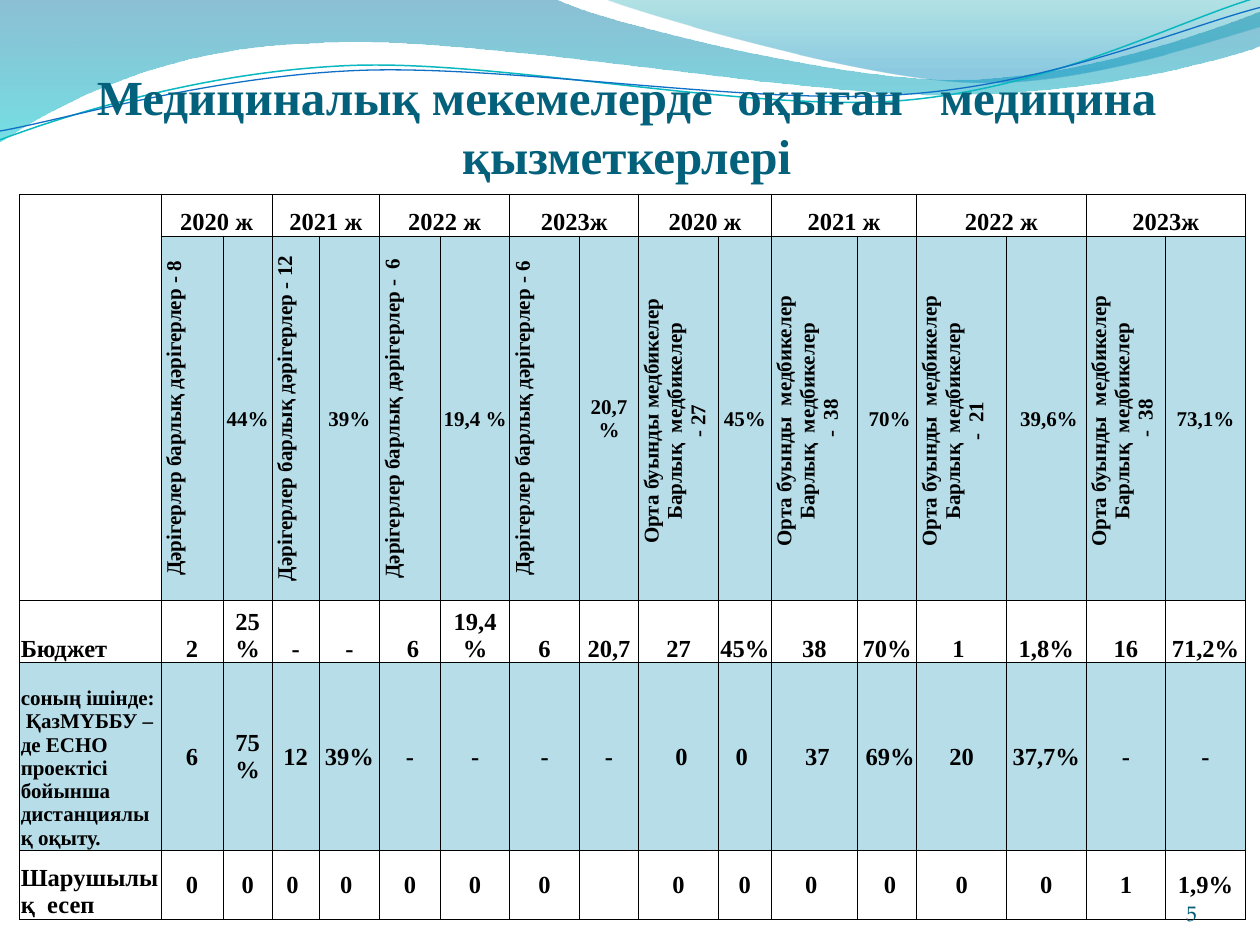
import math

from lxml import etree
from pptx import Presentation, util as u
from pptx.dml.color import RGBColor
from pptx.enum import text
from pptx.oxml.ns import qn

BLACK = RGBColor(0x00, 0x00, 0x00)
TITLE_TEAL = RGBColor(0x04, 0x61, 0x7B)
NUMBER_TEAL = RGBColor(0x04, 0x5D, 0x75)
PALE_BLUE = RGBColor(0xB6, 0xDD, 0xE8)
DEEP_BLUE = RGBColor(0x00, 0x74, 0xA1)
CYAN = RGBColor(0x00, 0xC6, 0xCF)
TEAL = RGBColor(0x00, 0xA1, 0xA9)
SKY_BLUE = RGBColor(0x00, 0x8B, 0xBF)
TEAL_LINE = RGBColor(0x0A, 0xB8, 0xBF)
BLUE_LINE = RGBColor(0x0F, 0x6F, 0xC6)

SERIF = "Times New Roman"
BOTTOM, MIDDLE = text.MSO_ANCHOR.BOTTOM, text.MSO_ANCHOR.MIDDLE
LEFT, CENTER, RIGHT = text.PP_ALIGN.LEFT, text.PP_ALIGN.CENTER, text.PP_ALIGN.RIGHT
TILT = 2.7

# Wave outlines on a grid of ten units across: pairs are corners, sixes are curves
LEFT_WAVE = [(0, 0), (4.4, -0.01), (4.76, 0.17, 6.64, 0.63, 7.58, 0.63),
             (8.53, 0.63, 9.58, 0.26, 10, 0.09), (10.01, 0.36),
             (9.83, 0.44, 8.7, 0.76, 7.46, 0.75), (6.22, 0.75, 3.82, 0.28, 2.57, 0.34),
             (1.29, 0.36, 0.46, 0.83, -0.01, 1.13)]
RIGHT_WAVE = [(4.79, -0.01), (5.09, 0.11, 6.82, 0.62, 7.69, 0.65),
              (8.56, 0.69, 9.61, 0.32, 10, 0.21), (10, 0)]
TEAL_CREST = [(0, 1.11), (0.48, 0.93, 1.58, 0.57, 2.77, 0.52),
              (3.95, 0.47, 5.93, 0.89, 7.13, 0.8), (8.33, 0.71, 9.38, 0.15, 9.98, -0.02)]
BLUE_CREST = [(0, 1.04), (0.47, 0.96, 1.64, 0.61, 2.83, 0.56),
              (4.03, 0.51, 5.97, 0.84, 7.17, 0.75), (8.36, 0.67, 9.41, 0.21, 10, 0.06)]

# Table content
COLUMNS = [1.12, 0.49, 0.39, 0.37, 0.48, 0.48, 0.55, 0.55, 0.47,
           0.63, 0.42, 0.68, 0.47, 0.71, 0.63, 0.63, 0.63]
ROWS = [0.33, 2.9, 0.49, 1.49, 0.55]
YEARS = ["2020 ж", "2021 ж", "2022 ж", "2023ж"] * 2
DOCTORS = "Дәрігерлер барлық дәрігерлер - "
NURSES = "Орта буынды  медбикелер \nБарлық  медбикелер \n-  "
STAFF = [DOCTORS + "8", DOCTORS + "12", DOCTORS + " 6", DOCTORS + "6",
         "Орта буынды медбикелер \nБарлық  медбикелер \n- 27 ",
         NURSES + "38", NURSES + "21 ", NURSES + "38"]
SHARES = ["44%", "39%", "19,4 %", "20,7%", "45%", " 70%", " 39,6%", "73,1%"]
BUDGET = ["Бюджет", "2", "25%", "-", "-", " 6", "19,4%", "6", "20,7",
          "27", "45%", "38", "70%", "1 ", "1,8%", "16", "71,2%"]
DISTANCE = ["соның ішінде:  ҚазМҮББУ –де ЕСНО проектісі  бойынша дистанциялық оқыту.",
            "6", "75%", "12", "39%", "-", "-", "-", "-",
            " 0", "0 ", " 37", " 69%", "20", "37,7%", "-", "-"]
SELF_FUNDED = ["Шарушылық  есеп", "0", "0", "0 ", "0 ", "0", "0", "0", "",
               "0", "0", "0 ", " 0", "0", "0", "1", "1,9%"]


def apply(target, values):
    for key, value in values.items():
        setattr(target, key, value)


def write(frame, wording, align, size, color=BLACK, font=SERIF, bold=True):
    paragraph = frame.paragraphs[0]
    paragraph.alignment = align
    for index, line in enumerate(wording.split("\n")):
        if index:
            paragraph.add_line_break()
        run = paragraph.add_run()
        run.text = line
        apply(run.font, {"name": font, "size": u.Pt(size), "bold": bold})
        run.font.color.rgb = color


def turn(point, center, degrees):
    """Turn a point clockwise about a center."""
    sin, cos = math.sin(math.radians(degrees)), math.cos(math.radians(degrees))
    dx, dy = point[0] - center[0], point[1] - center[1]
    return center[0] + dx * cos - dy * sin, center[1] + dx * sin + dy * cos


def add_outline(slide, box, outline, close, center=(0, 0), tilt=0):
    left, top, width, _ = box
    unit = width / 10
    knots = [turn(part[i:i + 2], center, tilt)
             for part in outline for i in range(0, len(part), 2)]
    points = [(left + x * unit, top + y * unit) for x, y in knots]
    builder = slide.shapes.build_freeform(*points[0])
    builder.add_line_segments(points[1:], close=close)
    shape = builder.convert_to_shape()
    shape.shadow.inherit = False
    shape.rotation = -tilt % 360
    # Join each three knots of a curve into one Bézier segment
    segments = iter(list(shape._element.spPr.iter(qn("a:lnTo"))))
    for part in outline[1:]:
        first = next(segments)
        if len(part) == 6:
            first.tag = qn("a:cubicBezTo")
            for _ in range(2):
                extra = next(segments)
                first.append(extra[0])
                extra.getparent().remove(extra)
    return shape


def add_waves(slide, box):
    # Translucent bands
    for outline, stops in ((LEFT_WAVE, ((DEEP_BLUE, 0, 45), (CYAN, 1, 55))),
                           (RIGHT_WAVE, ((TEAL, 0, 30), (SKY_BLUE, 0.8, 45)))):
        band = add_outline(slide, box, outline, True)
        band.line.fill.background()
        band.fill.gradient()
        band.fill.gradient_angle = 270
        for stop, (color, position, _) in zip(band.fill.gradient_stops, stops):
            stop.color.rgb = color
            stop.position = position
        for tag, (_, _, opacity) in zip(band._element.spPr.iter(qn("a:srgbClr")), stops):
            etree.SubElement(tag, qn("a:alpha"), val=str(opacity * 1000))
    # Thin tilted crests
    for outline, center, color, weight in ((TEAL_CREST, (4.99, 0.57), TEAL_LINE, 0.85),
                                           (BLUE_CREST, (5, 0.59), BLUE_LINE, 0.75)):
        crest = add_outline(slide, box, outline, False, center, TILT)
        crest.fill.background()
        crest.line.color.rgb = color
        crest.line.width = u.Pt(weight)


def add_label(slide, box, wording, top_margin=0, **style):
    frame = slide.shapes.add_textbox(*box).text_frame
    apply(frame, {"word_wrap": True, "vertical_anchor": BOTTOM, "margin_left": 0,
                  "margin_right": 0, "margin_top": top_margin, "margin_bottom": 0})
    write(frame, wording, **style)


def add_borders(cell):
    props = cell._tc.get_or_add_tcPr()
    for side in ("a:lnL", "a:lnR", "a:lnT", "a:lnB"):
        line = etree.SubElement(props, qn(side), w=str(u.Pt(0.5)))
        fill = etree.SubElement(line, qn("a:solidFill"))
        etree.SubElement(fill, qn("a:srgbClr"), val=str(BLACK))


def add_training_table(slide, box):
    year_row = [""] + [word for year in YEARS for word in (year, "")]
    staff_row = [""] + [word for pair in zip(STAFF, SHARES) for word in pair]
    content = [year_row, staff_row, BUDGET, DISTANCE, SELF_FUNDED]
    table = slide.shapes.add_table(len(ROWS), len(COLUMNS), *box).table
    apply(table, {"first_row": False, "horz_banding": False})
    for column, share in zip(table.columns, COLUMNS):
        column.width = int(box[2] * share / sum(COLUMNS))
    for row, share in zip(table.rows, ROWS):
        row.height = int(box[3] * share / sum(ROWS))

    for r, words in enumerate(content):
        for c, word in enumerate(words):
            cell = table.cell(r, c)
            add_borders(cell)
            anchor = BOTTOM if c == 0 or r in (0, 2) else MIDDLE
            apply(cell, {"margin_left": u.Inches(0.01), "margin_right": u.Inches(0.01),
                         "margin_top": u.Inches(0.01), "margin_bottom": 0,
                         "vertical_anchor": anchor})
            if r == 3 or (r == 1 and c):
                cell.fill.solid()
                cell.fill.fore_color.rgb = PALE_BLUE
            else:
                cell.fill.background()
            if r == 1 and c % 2:
                cell._tc.get_or_add_tcPr().set("vert", "vert270")
            if word:
                small = r == 1 or (r == 3 and c == 0)
                write(cell.text_frame, word, CENTER if c else LEFT, 12 if small else 14)

    # Merged headings
    table.cell(0, 0).merge(table.cell(1, 0))
    for c in range(1, len(COLUMNS), 2):
        table.cell(0, c).merge(table.cell(0, c + 1))


def main():
    deck = Presentation()
    apply(deck, {"slide_width": u.Inches(10), "slide_height": u.Inches(7.5)})
    slide = deck.slides.add_slide(deck.slide_layouts[6])

    def region(left, top, width, height):
        """Box from hundredths of the slide's width and height."""
        return [int(share * side / 100) for share, side in
                zip((left, top, width, height), (deck.slide_width, deck.slide_height) * 2)]

    add_waves(slide, region(0, 0, 100, 15))
    add_label(slide, region(1.55, 8.1, 97.33, 11.43),
              "Медициналық мекемелерде  оқыған   медицина  қызметкерлері ",
              top_margin=u.Inches(0.05), align=CENTER, size=28, color=TITLE_TEAL)
    add_training_table(slide, region(1.55, 20.6, 97.33, 76.67))
    add_label(slide, region(86.67, 92.67, 8.33, 5.33), "5", align=RIGHT, size=12,
              color=NUMBER_TEAL, font="TeX Gyre Pagella", bold=False)
    deck.save("out.pptx")


if __name__ == "__main__":
    main()
